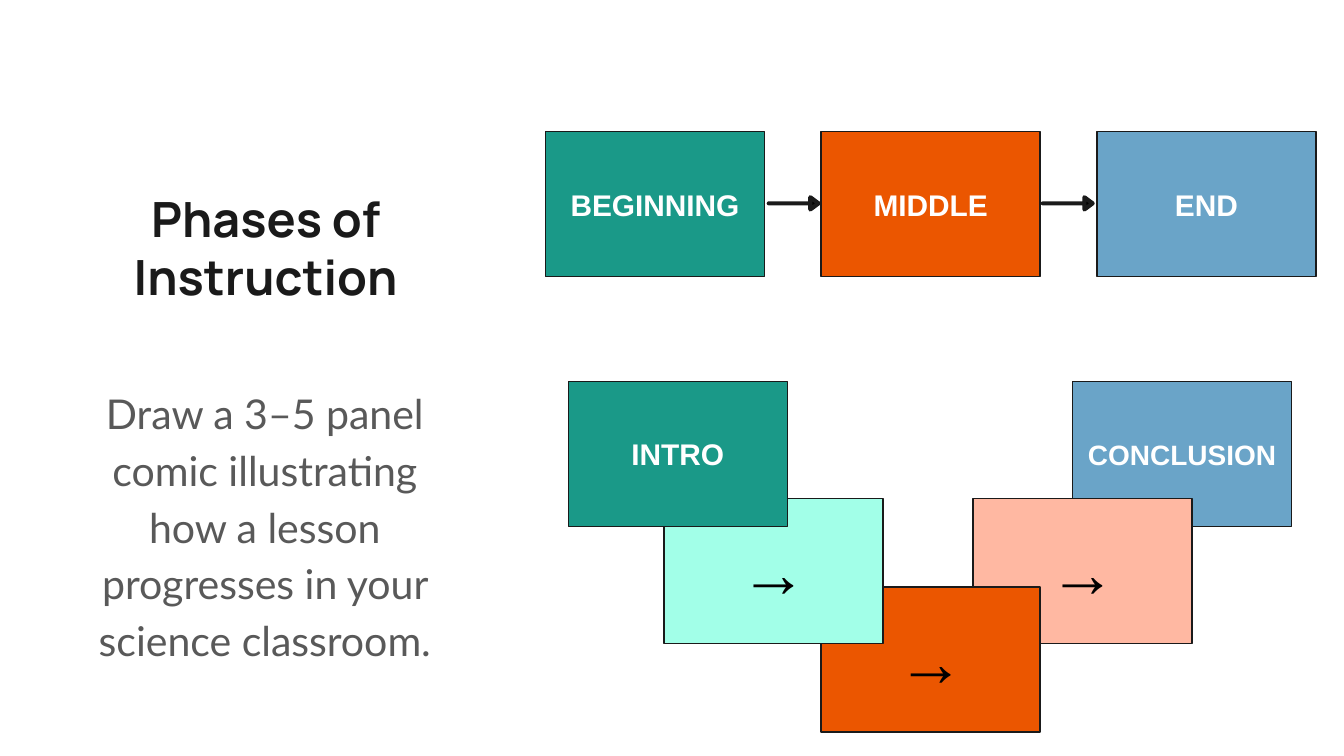
from dataclasses import dataclass

from pptx import Presentation
from pptx.dml.color import RGBColor
from pptx.enum.shapes import MSO_SHAPE
from pptx.enum.text import MSO_ANCHOR, PP_ALIGN
from pptx.util import Cm, Pt

RECTANGLE = MSO_SHAPE.RECTANGLE
RIGHT_ARROW = MSO_SHAPE.RIGHT_ARROW
MIDDLE = MSO_ANCHOR.MIDDLE
CENTER = PP_ALIGN.CENTER

INK = "1A1A1A"
BLACK = "000000"
WHITE = "FFFFFF"
GREY = "595959"
TEAL = "1A9988"
MINT = "A2FFE8"
ORANGE = "EB5600"
PEACH = "FFB8A2"
BLUE = "6AA4C8"

PANEL_WIDTH, PANEL_HEIGHT = 4.14, 2.74
ROW_LEFT, ROW_TOP, ROW_STEP = 10.31, 2.49, 5.21
ARROW_LEFT, ARROW_TOP, ARROW_STEP = 14.53, 3.73, 5.18
ARROW_WIDTH, ARROW_HEIGHT = 0.94, 0.23
UPPER, CENTRAL, LOWER = 7.21, 9.42, 11.1


@dataclass(frozen=True)
class Lettering:
    font: str
    size: float
    color: str
    bold: bool = True
    line_spacing: float = 1.0


@dataclass(frozen=True)
class Panel:
    label: str
    fill: str
    left: float
    top: float
    lettering: Lettering


HEADING = Lettering("Manrope", 26, INK)
PROMPT = Lettering("Lato", 22, GREY, bold=False, line_spacing=1.15)
LABEL = Lettering("Arial", 16, WHITE)
LONG_LABEL = Lettering("Arial", 15, WHITE)
SYMBOL = Lettering("Arial", 36, BLACK)

PHASES = [
    Panel(label, fill, ROW_LEFT + column * ROW_STEP, ROW_TOP, LABEL)
    for column, (label, fill) in enumerate(
        [("BEGINNING", TEAL), ("MIDDLE", ORANGE), ("END", BLUE)]
    )
]
COMIC = [
    Panel("CONCLUSION", BLUE, 20.27, UPPER, LONG_LABEL),
    Panel("→", PEACH, 18.39, CENTRAL, SYMBOL),
    Panel("→", ORANGE, ROW_LEFT + ROW_STEP, LOWER, SYMBOL),
    Panel("→", MINT, 12.55, CENTRAL, SYMBOL),
    Panel("INTRO", TEAL, 10.74, UPPER, LABEL),
]


def rgb(color: str) -> RGBColor:
    return RGBColor.from_string(color)


def write(shape, text: str, lettering: Lettering) -> None:
    frame = shape.text_frame
    frame.word_wrap = True
    frame.vertical_anchor = MIDDLE
    frame.margin_left = frame.margin_right = Cm(0.25)
    frame.margin_top = frame.margin_bottom = Cm(0.25)
    paragraph = frame.paragraphs[0]
    paragraph.alignment = CENTER
    paragraph.line_spacing = lettering.line_spacing
    run = paragraph.add_run()
    run.text = text
    run.font.name = lettering.font
    run.font.size = Pt(lettering.size)
    run.font.bold = lettering.bold
    run.font.color.rgb = rgb(lettering.color)


def paint(shape, fill: str, line_width: float) -> None:
    shape.shadow.inherit = False
    shape.fill.solid()
    shape.fill.fore_color.rgb = rgb(fill)
    shape.line.color.rgb = rgb(INK)
    shape.line.width = Pt(line_width)


def draw_panels(slide, panels: list[Panel]) -> None:
    group = slide.shapes.add_group_shape()
    for panel in panels:
        box = group.shapes.add_shape(
            RECTANGLE, Cm(panel.left), Cm(panel.top), Cm(PANEL_WIDTH), Cm(PANEL_HEIGHT)
        )
        paint(box, panel.fill, 0.75)
        write(box, panel.label, panel.lettering)


def draw_arrow(slide, left: float) -> None:
    arrow = slide.shapes.add_shape(
        RIGHT_ARROW, Cm(left), Cm(ARROW_TOP), Cm(ARROW_WIDTH), Cm(ARROW_HEIGHT)
    )
    arrow.adjustments[0] = 0
    arrow.adjustments[1] = 0.67
    paint(arrow, BLACK, 2.25)


def main() -> None:
    deck = Presentation()
    deck.slide_width, deck.slide_height = Cm(25.4), Cm(14.29)
    slide = deck.slides.add_slide(deck.slide_layouts[6])

    heading = slide.shapes.add_textbox(Cm(1.9), Cm(3.3), Cm(6.25), Cm(2.74))
    write(heading, "Phases of Instruction", HEADING)
    prompt = slide.shapes.add_textbox(Cm(1.55), Cm(6.15), Cm(6.91), Cm(7.47))
    write(
        prompt,
        "Draw a 3–5 panel comic illustrating how a lesson progresses "
        "in your science classroom.",
        PROMPT,
    )

    draw_panels(slide, PHASES)
    draw_panels(slide, COMIC)
    for gap in range(len(PHASES) - 1):
        draw_arrow(slide, ARROW_LEFT + gap * ARROW_STEP)

    deck.save("out.pptx")


if __name__ == "__main__":
    main()
